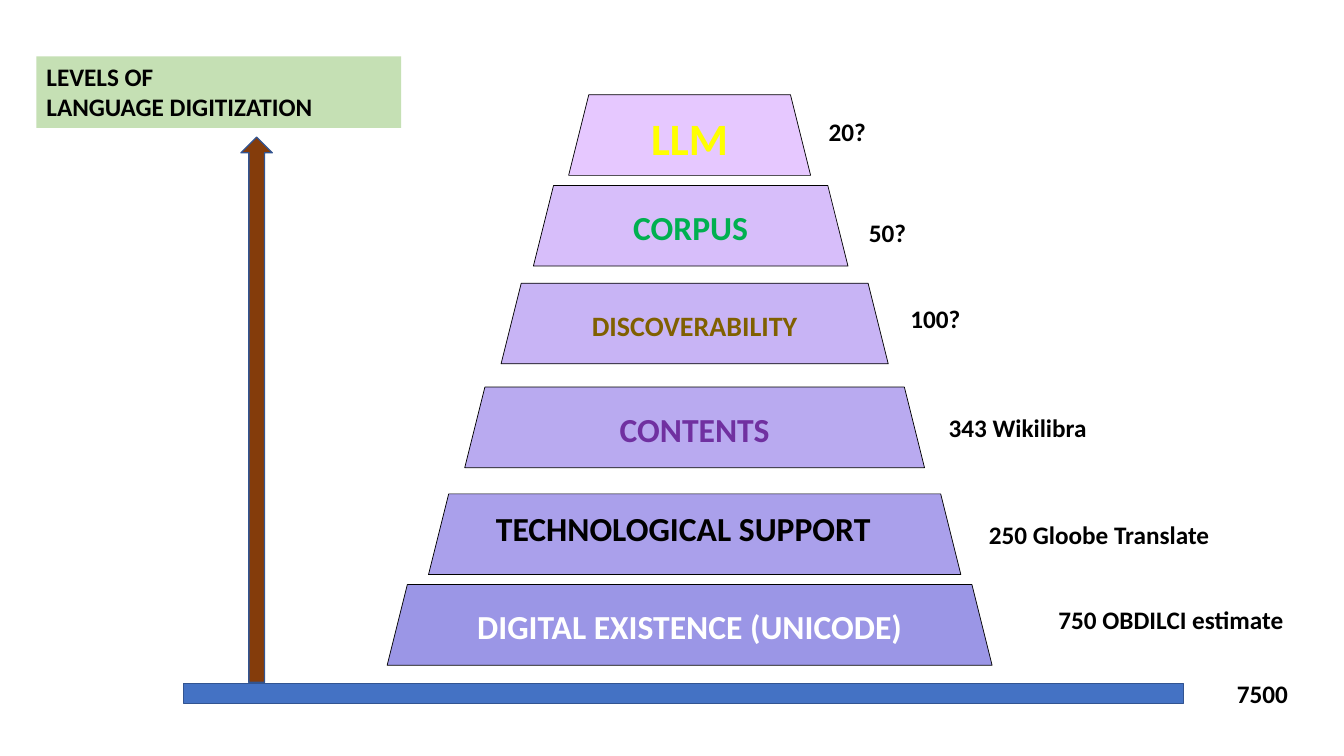
from pptx import Presentation
from pptx.dml.color import RGBColor
from pptx.enum.shapes import MSO_SHAPE
from pptx.enum.text import MSO_ANCHOR, MSO_AUTO_SIZE, PP_ALIGN
from pptx.util import Inches, Pt

WIDE, HIGH = 13.33, 7.5
TIER_H, TOP_W, STEP = 0.8, 2.4, 0.72
LABEL_H = 0.4

# left, top, fill, word, size, colour
TIERS = [
    (5.64, 0.94, "E6C8FF", "LLM", 32, "FFFF00"),
    (5.29, 1.84, "D7BEFA", "CORPUS", 24, "00B050"),
    (4.97, 2.81, "C8B4F5", "DISCOVERABILITY", 20, "806000"),
    (4.61, 3.84, "B9AAF0", "CONTENTS", 24, "7030A0"),
    (4.25, 4.9, "AAA0EB", "", 24, "000000"),
    (3.84, 5.8, "9B96E6", "DIGITAL EXISTENCE (UNICODE)", 24, "FFFFFF"),
]

# left, top, width, text
COUNTS = [
    (8.12, 1.11, 0.58, "20?"),
    (8.52, 2.11, 0.58, "50?"),
    (8.93, 2.96, 0.76, "100?"),
    (9.31, 4.04, 1.7, "343 Wikilibra"),
    (9.71, 5.1, 2.39, "250 Gloobe Translate"),
    (10.4, 5.95, 2.66, "750 OBDILCI estimate"),
    (12.17, 6.68, 0.71, "7500"),
]


def color(code):
    return RGBColor.from_string(code)


def inches(box):
    return [Inches(n) for n in box]


def write(frame, text, size, ink="000000", align=PP_ALIGN.LEFT):
    frame.text = text
    for para in frame.paragraphs:
        para.alignment = align
        for run in para.runs:
            font = run.font
            font.name, font.size, font.bold = "Calibri", Pt(size), True
            font.color.rgb = color(ink)


def solid(slide, kind, box, fill, edge, weight):
    shape = slide.shapes.add_shape(kind, *inches(box))
    shape.shadow.inherit = False
    shape.fill.solid()
    shape.fill.fore_color.rgb = color(fill)
    shape.line.color.rgb = color(edge)
    shape.line.width = Pt(weight)
    return shape


def label(slide, box, text, size):
    frame = slide.shapes.add_textbox(*inches(box)).text_frame
    frame.word_wrap = False
    frame.auto_size = MSO_AUTO_SIZE.SHAPE_TO_FIT_TEXT
    write(frame, text, size)


def heading(slide, box):
    title = slide.shapes.title
    title.left, title.top, title.width, title.height = inches(box)
    title.fill.solid()
    title.fill.fore_color.rgb = color("C5E0B4")
    frame = title.text_frame
    frame.word_wrap = False
    frame.auto_size = MSO_AUTO_SIZE.NONE
    frame.vertical_anchor = MSO_ANCHOR.TOP
    write(frame, "LEVELS OF\vLANGUAGE DIGITIZATION", 18)


def pyramid(slide):
    for row, (left, top, fill, word, size, ink) in enumerate(TIERS):
        box = (left, top, TOP_W + STEP * row, TIER_H)
        tier = solid(slide, MSO_SHAPE.TRAPEZOID, box, fill, "000000", 0.5)
        if word:
            tier.text_frame.vertical_anchor = MSO_ANCHOR.MIDDLE
            write(tier.text_frame, word, size, ink, PP_ALIGN.CENTER)
    label(slide, (4.82, 4.99, 4.04, 0.5), "TECHNOLOGICAL SUPPORT", 24)


def counts(slide):
    for left, top, width, text in COUNTS:
        label(slide, (left, top, width, LABEL_H), text, 18)


def axis(slide, base, arrow):
    solid(slide, MSO_SHAPE.RECTANGLE, base, "4472C4", "325491", 1)
    shaft = solid(slide, MSO_SHAPE.DOWN_ARROW, arrow, "843C0B", "325491", 1)
    shaft.rotation = 180


def main():
    deck = Presentation()
    deck.slide_width, deck.slide_height = Inches(WIDE), Inches(HIGH)
    slide = deck.slides.add_slide(deck.slide_layouts[5])
    pyramid(slide)
    counts(slide)
    heading(slide, (0.36, 0.56, 3.62, 0.71))
    axis(slide, (1.82, 6.78, 9.92, 0.2), (2.39, 1.36, 0.31, 5.41))
    deck.save("out.pptx")


if __name__ == "__main__":
    main()
